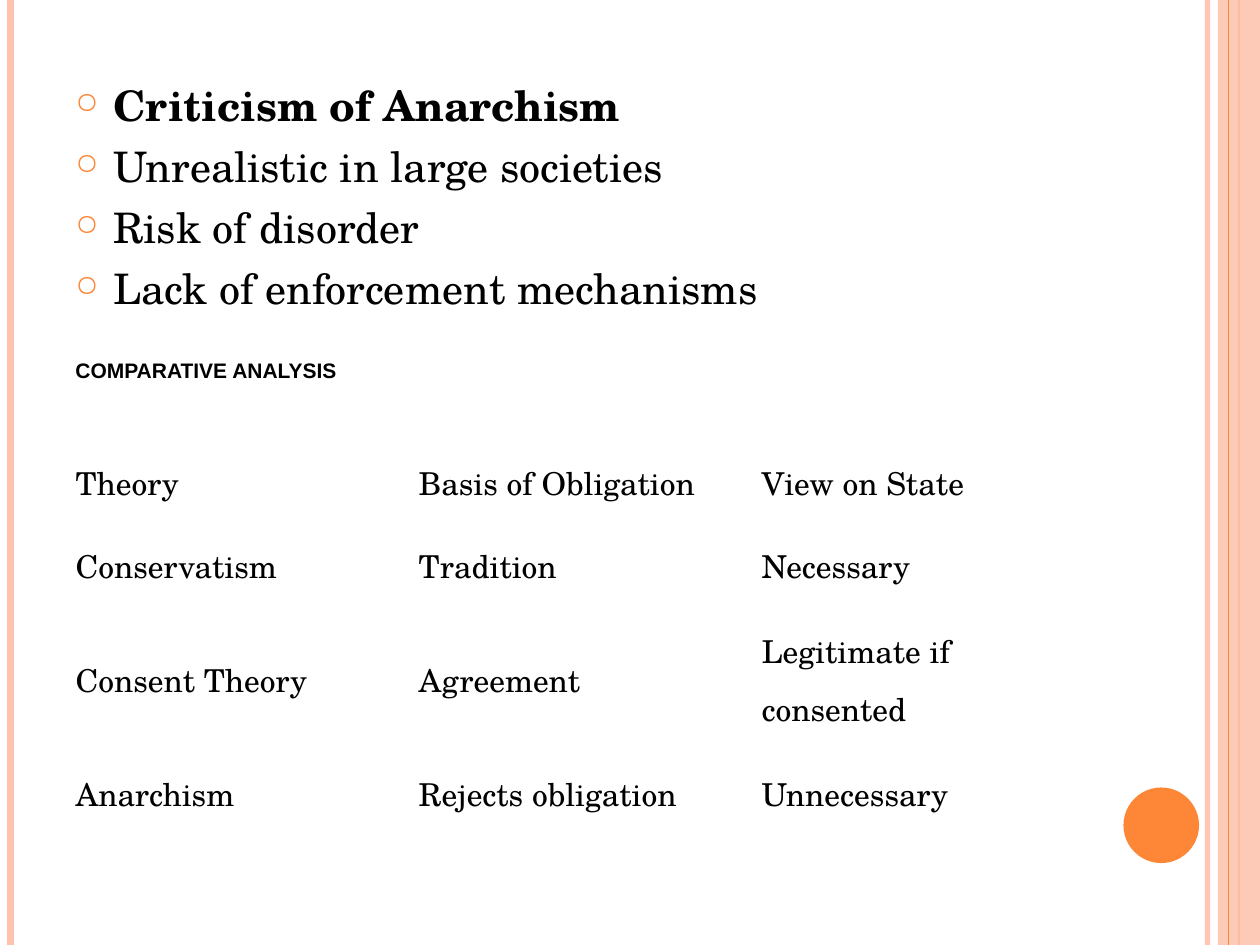
from dataclasses import dataclass

from lxml.etree import SubElement
from pptx import Presentation
from pptx.dml.color import RGBColor
from pptx.enum.shapes import MSO_CONNECTOR as Connector, MSO_SHAPE as Shape
from pptx.enum.text import MSO_ANCHOR as Anchor, PP_ALIGN as Align
from pptx.oxml.ns import qn
from pptx.util import Pt


@dataclass(frozen=True)
class Theme:
    orange: str = "FE8637"
    peach: str = "FEC3AE"
    ink: str = "000000"
    serif: str = "TeX Gyre Schola"
    sans: str = "Arial"
    list_size: int = 24
    table_size: int = 18
    heading_size: int = 12


THEME = Theme()
WIDTH, HEIGHT = 720, 540

POINTS = [
    "Criticism of Anarchism",
    "Unrealistic in large societies",
    "Risk of disorder",
    "Lack of enforcement mechanisms",
]
THEORIES = [
    ["Theory", "Basis of Obligation", "View on State"],
    ["Conservatism", "Tradition", "Necessary"],
    ["Consent Theory", "Agreement", "Legitimate if consented"],
    ["Anarchism", "Rejects obligation", "Unnecessary"],
]
ROW_HEIGHTS = [47.5, 47.5, 82.5, 47.5]


def write(paragraph, text, size, font=THEME.serif, bold=False, before=0, spacing=None):
    paragraph.alignment = Align.LEFT
    paragraph.space_before = Pt(before)
    if spacing:
        paragraph.line_spacing = spacing
    run = paragraph.add_run()
    run.text = text
    run.font.size = Pt(size)
    run.font.name = font
    run.font.bold = bold
    run.font.color.rgb = RGBColor.from_string(THEME.ink)


def add_text_frame(slide, left, top, width, height):
    frame = slide.shapes.add_textbox(Pt(left), Pt(top), Pt(width), Pt(height)).text_frame
    frame.word_wrap = True
    frame.vertical_anchor = Anchor.TOP
    return frame


def set_opacity(fill, percent):
    color = fill._xPr.find(qn("a:solidFill"))[0]
    SubElement(color, qn("a:alpha"), val=str(percent * 1000))


def add_bullet(paragraph, indent):
    properties = paragraph._p.get_or_add_pPr()
    properties.set("marL", str(Pt(indent)))
    properties.set("indent", str(-Pt(indent)))
    color = SubElement(properties, qn("a:buClr"))
    SubElement(color, qn("a:srgbClr"), val=THEME.orange)
    SubElement(properties, qn("a:buSzPct"), val="70000")
    SubElement(properties, qn("a:buChar"), char="○")


def add_vertical_line(slide, x, top, height, color, weight, opacity=100):
    line = slide.shapes.add_connector(
        Connector.STRAIGHT, Pt(x), Pt(top), Pt(x), Pt(top + height))
    line.line.color.rgb = RGBColor.from_string(color)
    line.line.width = Pt(weight)
    if opacity < 100:
        set_opacity(line.line.fill, opacity)
    SubElement(line._element.spPr, qn("a:effectLst"))


def add_filled_shape(slide, kind, left, top, width, height, color, opacity=100):
    shape = slide.shapes.add_shape(kind, Pt(left), Pt(top), Pt(width), Pt(height))
    shape.shadow.inherit = False
    shape.fill.solid()
    shape.fill.fore_color.rgb = RGBColor.from_string(color)
    if opacity < 100:
        set_opacity(shape.fill, opacity)
    shape.line.fill.background()


def add_frame(slide, left, top, width, height):
    right = left + width
    # Edge lines
    add_vertical_line(slide, right - 30, top, height, THEME.peach, 3, 93)
    add_vertical_line(slide, left + 6, top, height, THEME.peach, 4.5)
    add_vertical_line(slide, right - 12, top, height, THEME.orange, 1.5)
    # Right band with its inner line
    add_filled_shape(slide, Shape.RECTANGLE, right - 24, top, 24, height, THEME.peach, 87)
    add_vertical_line(slide, right - 18, top, height, THEME.orange, 0.75)
    # Corner disc
    add_filled_shape(slide, Shape.OVAL, right - 78, top + height - 90, 43.2, 43.2, THEME.orange)


def add_points(slide, left, top, width, height):
    frame = add_text_frame(slide, left, top, width, height)
    for index, text in enumerate(POINTS):
        first = index == 0
        paragraph = frame.paragraphs[0] if first else frame.add_paragraph()
        add_bullet(paragraph, 21.6)
        write(paragraph, text, THEME.list_size, bold=first, before=0 if first else 6)


def add_heading(slide, left, top, width, height):
    frame = add_text_frame(slide, left, top, width, height)
    write(frame.paragraphs[0], "COMPARATIVE ANALYSIS", THEME.heading_size,
          font=THEME.sans, bold=True)


def add_theory_table(slide, left, top, width):
    columns = len(THEORIES[0])
    table = slide.shapes.add_table(
        len(THEORIES), columns, Pt(left), Pt(top), Pt(width), Pt(sum(ROW_HEIGHTS))).table
    table.first_row = table.horz_banding = False
    # Plain grid style without borders
    table._tbl.tblPr.find(qn("a:tableStyleId")).text = "{2D5ABB26-0587-4C30-8999-92F81FD0307C}"
    for column in table.columns:
        column.width = Pt(width / columns)
    for row, height, texts in zip(table.rows, ROW_HEIGHTS, THEORIES):
        row.height = Pt(height)
        for cell, text in zip(row.cells, texts):
            cell.fill.background()
            cell.vertical_anchor = Anchor.MIDDLE
            write(cell.text_frame.paragraphs[0], text, THEME.table_size, spacing=1.25)


def main():
    presentation = Presentation()
    presentation.slide_width, presentation.slide_height = Pt(WIDTH), Pt(HEIGHT)
    slide = presentation.slides.add_slide(presentation.slide_layouts[6])
    add_frame(slide, 0, 0, WIDTH, HEIGHT)
    add_points(slide, 36, 42, 588, 468)
    add_theory_table(slide, 36, 249, 588)
    add_heading(slide, 36, 201, 270, 44)
    presentation.save("out.pptx")


if __name__ == "__main__":
    main()
